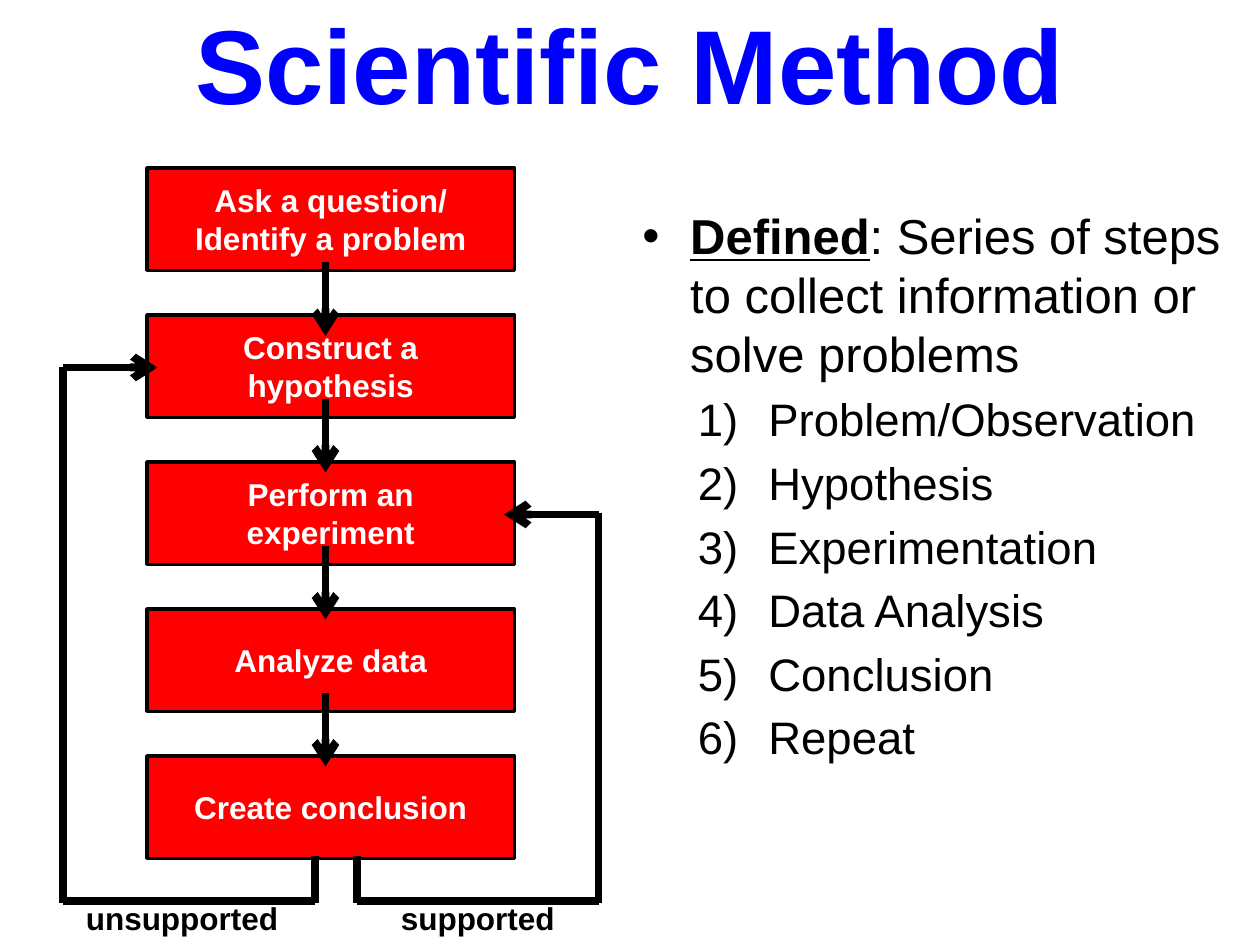
from pptx import Presentation
from pptx.dml.color import RGBColor
from pptx.enum.shapes import MSO_CONNECTOR, MSO_SHAPE
from pptx.enum.text import MSO_ANCHOR, PP_ALIGN
from pptx.oxml.ns import qn
from pptx.util import Inches, Pt
from lxml.etree import SubElement

BLACK, WHITE, RED, BLUE = "000000", "FFFFFF", "FF0000", "0000FF"

deck = Presentation()
deck.slide_width, deck.slide_height = Inches(10), Inches(7.5)
page = deck.slides.add_slide(deck.slide_layouts[6])

# Grid of 120 columns by 90 rows
CELL = deck.slide_width / 120


def grid(*cells):
    return [round(CELL * cell) for cell in cells]


def add_span(para, text, size, color, bold=False, underline=False):
    span = para.add_run()
    span.text = text
    font = span.font
    font.name, font.size = "Arial", Pt(size)
    font.bold, font.underline = bold, underline
    font.color.rgb = RGBColor.from_string(color)


# Definition and numbered steps
body = page.shapes.add_textbox(*grid(60, 19, 60, 71)).text_frame
body.word_wrap = True
para = body.paragraphs[0]
add_span(para, "Defined", 28, BLACK, bold=True, underline=True)
add_span(para, ": Series of steps to collect information or solve problems", 28, BLACK)
for step in ["Problem/Observation", "Hypothesis", "Experimentation",
             "Data Analysis", "Conclusion", "Repeat"]:
    para = body.add_paragraph()
    para.level = 1
    add_span(para, step, 26, BLACK)

# Bullets, indents and spacing of the list
for para in body.paragraphs:
    props = para._p.get_or_add_pPr()
    left, hanging = (1, 0.56) if para.level else (0.38, 0.38)
    props.set("marL", str(Inches(left)))
    props.set("indent", str(-Inches(hanging)))
    before = SubElement(props, qn("a:spcBef"))
    SubElement(before, qn("a:spcPct")).set("val", "20000")
    SubElement(props, qn("a:buFont")).set("typeface", "Arial")
    if para.level:
        SubElement(props, qn("a:buAutoNum")).set("type", "arabicParenR")
    else:
        SubElement(props, qn("a:buChar")).set("char", "•")

# Title
title = page.shapes.add_textbox(*grid(0, 0, 120, 12)).text_frame
title.word_wrap = True
title.vertical_anchor = MSO_ANCHOR.MIDDLE
title.paragraphs[0].alignment = PP_ALIGN.CENTER
add_span(title.paragraphs[0], "Scientific Method", 60, BLUE, bold=True)

# Flow chart boxes, one every 14 rows
stages = [["Ask a question/", "Identify a problem"], ["Construct a hypothesis"],
          ["Perform an experiment"], ["Analyze data"], ["Create conclusion"]]
for index, lines in enumerate(stages):
    box = page.shapes.add_shape(
        MSO_SHAPE.RECTANGLE, *grid(14, 16 + 14 * index, 35, 9.75))
    box.shadow.inherit = False
    box.fill.solid()
    box.fill.fore_color.rgb = RGBColor.from_string(RED)
    box.line.color.rgb = RGBColor.from_string(BLACK)
    box.line.width = Pt(2)
    frame = box.text_frame
    frame.word_wrap = True
    frame.vertical_anchor = MSO_ANCHOR.MIDDLE
    for number, line in enumerate(lines):
        para = frame.add_paragraph() if number else frame.paragraphs[0]
        para.alignment = PP_ALIGN.CENTER
        add_span(para, line, 18, WHITE, bold=True)

# Connectors: start column and row, end column and row, arrowhead
connectors = [
    # Supported: back to the experiment
    (34, 81.5, 34, 86, False),
    (57, 85.8, 34, 85.8, False),
    (57, 48.9, 57, 86, False),
    (57, 49, 48, 49, True),
    # Unsupported: back to the hypothesis
    (30, 81.5, 30, 86, False),
    (30, 85.8, 6, 85.8, False),
    (6, 35, 6, 86, False),
    (6, 35, 15, 35, True),
]
# Steps down from box to box
connectors += [(31, top, 31, top + 7, True) for top in (25, 38, 52, 66)]
for *ends, has_arrow in connectors:
    connector = page.shapes.add_connector(MSO_CONNECTOR.STRAIGHT, *grid(*ends))
    connector.line.color.rgb = RGBColor.from_string(BLACK)
    connector.line.width = Pt(4.5)
    if has_arrow:
        SubElement(connector.line._get_or_add_ln(), qn("a:tailEnd")).set("type", "arrow")
    SubElement(connector._element.spPr, qn("a:effectLst"))

# Labels of the two loops
for column, label in [(37, "supported"), (7, "unsupported")]:
    frame = page.shapes.add_textbox(*grid(column, 85, 24, 4.8)).text_frame
    frame.word_wrap = True
    add_span(frame.paragraphs[0], label, 18, BLACK, bold=True)

deck.save("out.pptx")
